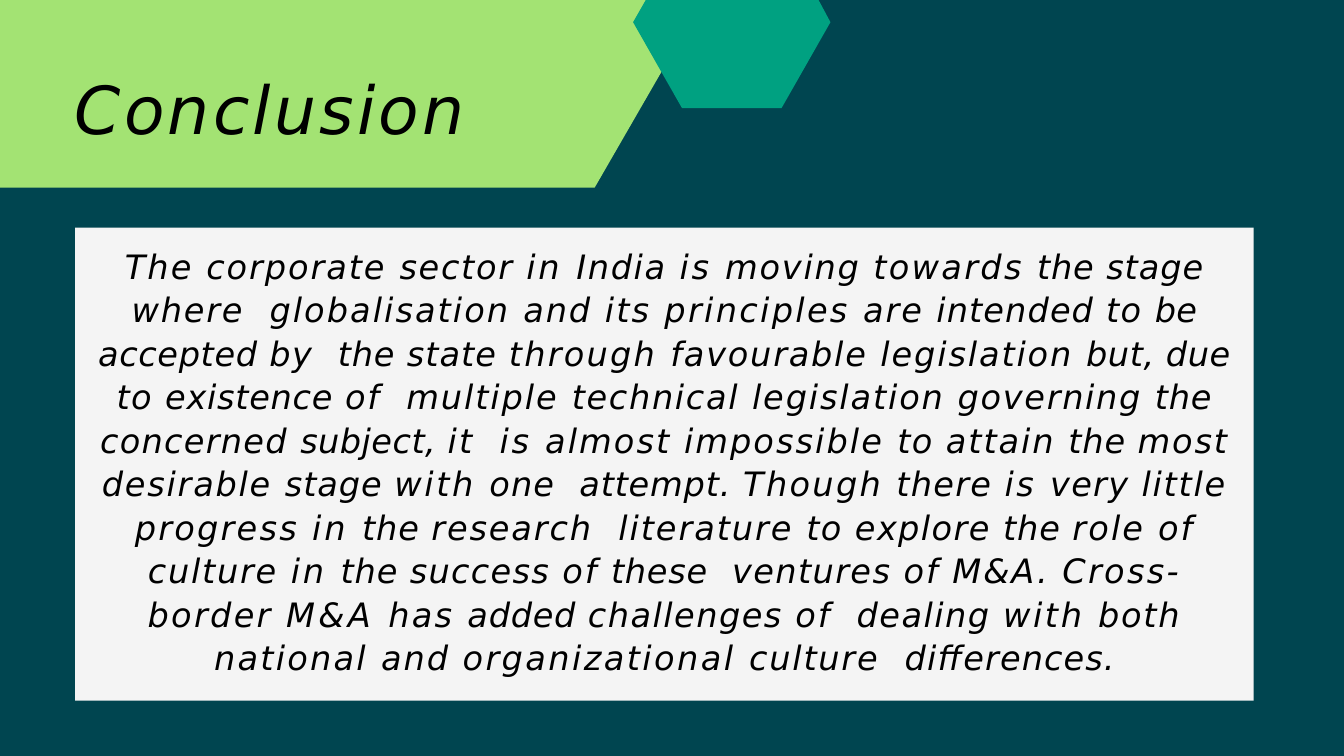
from pptx import Presentation
from pptx import util as u
from pptx.dml.color import RGBColor
from pptx.enum import shapes, text

NAVY = RGBColor(0x00, 0x45, 0x50)
LIME = RGBColor(0xA3, 0xE3, 0x73)
TEAL = RGBColor(0x00, 0xA1, 0x81)
PALE = RGBColor(0xF4, 0xF4, 0xF4)
BLACK = RGBColor(0, 0, 0)

CONCLUSION = (
    "The corporate sector in India is moving towards the stage "
    "where  globalisation and its principles are intended to be "
    "accepted by  the state through favourable legislation but, due "
    "to existence of  multiple technical legislation governing the "
    "concerned subject, it  is almost impossible to attain the most "
    "desirable stage with one  attempt. Though there is very little "
    "progress in the research  literature to explore the role of "
    "culture in the success of these  ventures of M&A. Cross-border "
    "M&A has added challenges of  dealing with both "
    "national and organizational culture  differences."
)

# Letter spacing in points, and the words that take it; all others take 2
WORDS_BY_SPACING = {
    0.3: "be",
    0.5: "subject,",
    0.6: "but, due",
    0.7: "accepted",
    0.8: "existence these added",
    0.9: "the attempt.",
    1.0: "stage",
    1.1: "state one",
    1.2: "intended differences.",
    1.4: "by concerned there very success",
    1.5: "to explore ventures",
    1.6: "challenges dealing",
    1.8: "sector India technical governing",
    1.9: "moving where favourable desirable little culture both",
    2.1: "corporate multiple attain literature M&A.",
    2.2: "The globalisation it almost impossible",
    2.3: "role",
    2.4: "its through progress has national",
    2.5: "towards principles Though Cross-border",
    2.6: "organizational",
    2.8: "with",
    2.9: "is",
    3.1: "in",
    3.5: "Conclusion",
    3.6: "M&A",
}
spacing_of = {word: points for points, words in WORDS_BY_SPACING.items()
              for word in words.split()}


def add_filled(shape, colour):
    shape.shadow.inherit = False
    shape.fill.solid()
    shape.fill.fore_color.rgb = colour
    shape.line.fill.background()


def add_text(page, left, top, width, height, wording, size):
    box = page.shapes.add_textbox(u.Cm(left), u.Cm(top), u.Cm(width), u.Cm(height))
    frame = box.text_frame
    frame.word_wrap = True
    frame.auto_size = text.MSO_AUTO_SIZE.SHAPE_TO_FIT_TEXT
    frame.margin_left = frame.margin_right = frame.margin_bottom = 0
    frame.margin_top = u.Cm(0.03)
    paragraph = frame.paragraphs[0]
    paragraph.space_before = u.Pt(1)
    paragraph.font.name = "DejaVu Sans"
    paragraph.font.size = u.Pt(size)
    paragraph.font.italic = True
    paragraph.font.color.rgb = BLACK
    words = wording.split(" ")
    for number, word in enumerate(words, start=1):
        span = paragraph.add_run()
        span.text = word + (" " if number < len(words) else "")
        spacing = spacing_of.get(word, 2)
        span._r.get_or_add_rPr().set("spc", str(round(spacing * 100)))
    return paragraph


deck = Presentation()
deck.slide_width, deck.slide_height = u.Cm(50.8), u.Cm(28.58)
page = deck.slides.add_slide(deck.slide_layouts[6])

# Backdrop
backdrop = page.shapes.add_shape(
    shapes.MSO_SHAPE.RECTANGLE, 0, 0, deck.slide_width, deck.slide_height)
add_filled(backdrop, NAVY)

# Title banner and the hexagon cut off by the top edge
banner = [(0, 0), (26.57, 0), (22.48, 7.09), (0, 7.09)]
hexagon = [(29.54, 4.09), (25.78, 4.09), (23.93, 0.84),
           (24.41, 0), (30.94, 0), (31.39, 0.84)]
for corners, colour in ((banner, LIME), (hexagon, TEAL)):
    points = [(u.Cm(x), u.Cm(y)) for x, y in corners]
    outline = page.shapes.build_freeform(*points[0])
    outline.add_line_segments(points[1:], close=True)
    add_filled(outline.convert_to_shape(), colour)

# Title
add_text(page, 2.82, 2.54, 14.83, 3.07, "Conclusion", 71)

# Panel with the conclusion
panel = page.shapes.add_shape(
    shapes.MSO_SHAPE.RECTANGLE, u.Cm(2.84), u.Cm(8.61), u.Cm(44.55), u.Cm(17.88))
add_filled(panel, PALE)
body = add_text(page, 3.43, 9.14, 43.38, 16.48, CONCLUSION, 36)
body.alignment = text.PP_ALIGN.CENTER
body.line_spacing = 1.08

deck.save("out.pptx")
